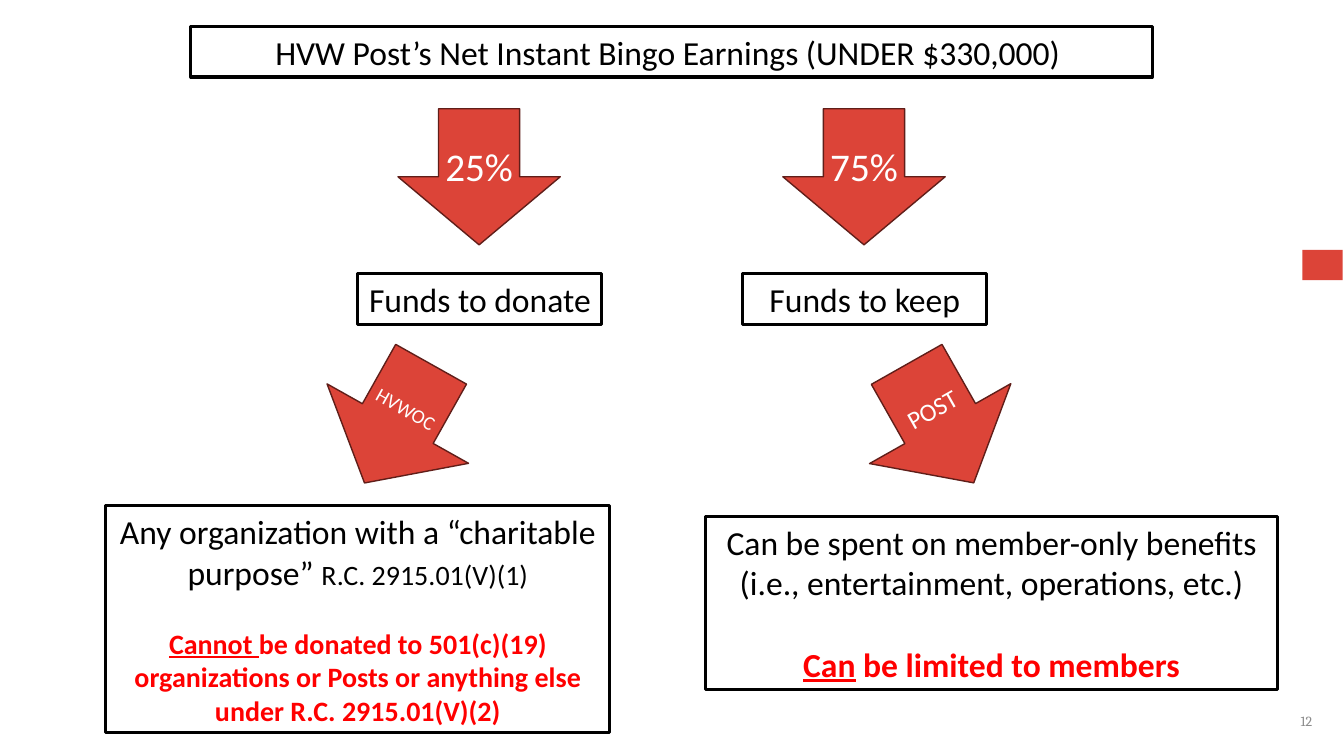
"""Build the slide on how instant bingo earnings are divided."""
from pptx import Presentation, util as u
from pptx.dml import color
from pptx.enum import shapes, text

RED, BLACK, WHITE, ALERT = "DC4438", "000000", "FFFFFF", "FF0000"
COLUMN_PITCH = 9.7
ARROW_SIZE = (4.09, 3.43)


def paint(target, value):
    """Give a fill or font the colour of a hex string."""
    if hasattr(target, "solid"):
        target.solid()
        target = target.fore_color
    else:
        target = target.color
    target.rgb = color.RGBColor.from_string(value)


def outline(box, value, width):
    """Draw the border of a box."""
    paint(box.line.fill, value)
    box.line.width = u.Pt(width)


def place(box, left, top, width, height):
    """Set position and size in centimetres."""
    box.left, box.top = u.Cm(left), u.Cm(top)
    box.width, box.height = u.Cm(width), u.Cm(height)


def add_span(para, words, size=24, ink=BLACK, font="Calibri", bold=False, underline=False):
    """Append formatted words to a paragraph."""
    span = para.add_run()
    span.text = words
    span.font.name, span.font.size = font, u.Pt(size)
    span.font.bold, span.font.underline = bold, underline
    paint(span.font, ink)


def add_para(box, spans, first=True, gap=0, align=text.PP_ALIGN.CENTER):
    """Write one paragraph from pairs of words and format."""
    frame = box.text_frame
    if first:
        frame.word_wrap = True
        frame.auto_size = text.MSO_AUTO_SIZE.NONE
        frame.vertical_anchor = text.MSO_ANCHOR.MIDDLE
    para = frame.paragraphs[0] if first else frame.add_paragraph()
    para.alignment = align
    para.space_before = u.Pt(gap)
    for words, style in spans:
        add_span(para, words, **style)


def add_block(page, kind, left, top, width, height, fill=None):
    """Add a preset shape without shadow or border."""
    block = page.shapes.add_shape(kind, *map(u.Cm, (left, top, width, height)))
    block.shadow.inherit = False
    block.line.fill.background()
    if fill:
        paint(block.fill, fill)
    else:
        block.fill.background()
    return block


def add_frame(page, *place_at):
    """Add an unfilled box with a heavy black border."""
    frame = add_block(page, shapes.MSO_SHAPE.RECTANGLE, *place_at)
    outline(frame, BLACK, 2.25)
    return frame


def add_arrow(page, left, top, rotation=0):
    """Add a red down arrow."""
    arrow = add_block(page, shapes.MSO_SHAPE.DOWN_ARROW, left, top, *ARROW_SIZE, fill=RED)
    outline(arrow, "601E19", 1)
    arrow.rotation = rotation
    return arrow


def add_label(page, words, left, top, width, height, align=text.PP_ALIGN.CENTER, **style):
    """Add a plain text box."""
    label = page.shapes.add_textbox(*map(u.Cm, (left, top, width, height)))
    add_para(label, [(words, style)], align=align)


def add_title(page, words):
    """Turn the title placeholder into the framed heading."""
    title = page.shapes.title
    place(title, 4.81, 0.67, 24.23, 1.27)
    outline(title, BLACK, 2.25)
    add_para(title, [(words, {})])


def add_share(page, column, percent, purpose):
    """Add the percentage arrow and purpose box of a column."""
    shift = column * COLUMN_PITCH
    add_arrow(page, 10.03 + shift, 2.74)
    add_label(page, percent, 10.17 + shift, 3.45, 3.81, 1.45, size=28, ink=WHITE)
    box = add_frame(page, 9.02 + shift, 6.9, 6.15, 1.27)
    add_para(box, [(purpose, {})])


def add_recipient(page, name, left, rotation, size):
    """Add a tilted arrow with the recipient's name across its full shaft."""
    arrow = add_arrow(page, left, 8.96, rotation)
    arrow.text_frame.margin_left = arrow.text_frame.margin_right = u.Cm(0)
    add_para(arrow, [(name, {"size": size, "ink": WHITE})])


def main():
    """Build and save the deck."""
    deck = Presentation()
    deck.slide_width, deck.slide_height = u.Cm(33.87), u.Cm(19.05)
    page = deck.slides.add_slide(deck.slide_layouts[5])

    add_block(page, shapes.MSO_SHAPE.RECTANGLE, 32.82, 6.3, 1.02, 0.76, fill=RED)
    add_label(page, "12", 25.7, 17.65, 7.62, 1.02, align=text.PP_ALIGN.RIGHT,
              size=10, font="Cambria", ink="8C8C8C")
    add_title(page, "HVW Post’s Net Instant Bingo Earnings (UNDER $330,000) ")

    add_share(page, 0, "25%", "Funds to donate")
    add_share(page, 1, "75%", "Funds to keep")
    add_recipient(page, "HVWOC", 7.98, 29.3, 14)
    add_recipient(page, "POST", 21.65, 330.5, 18)

    alert = {"ink": ALERT, "bold": True}
    donate = add_frame(page, 2.67, 12.73, 12.7, 5.74)
    add_para(donate, [("Any organization with a “charitable purpose” ", {}),
                      ("R.C. 2915.01(V)(1)", {"size": 20})])
    add_para(donate, [("Cannot ", {"size": 20, "underline": True, **alert}),
                      ("be donated to 501(c)(19) organizations or Posts or anything else "
                       "under R.C. 2915.01(V)(2)", {"size": 20, **alert})],
             first=False, gap=24.4)

    keep = add_frame(page, 17.79, 13.01, 14.4, 4.37)
    add_para(keep, [("Can be spent on member-only benefits", {})])
    add_para(keep, [("(i.e., entertainment, operations, etc.)", {})], first=False)
    add_para(keep, [("Can", {"underline": True, **alert}),
                    (" be limited to members", alert)], first=False, gap=29.3)

    deck.save("out.pptx")


if __name__ == "__main__":
    main()
